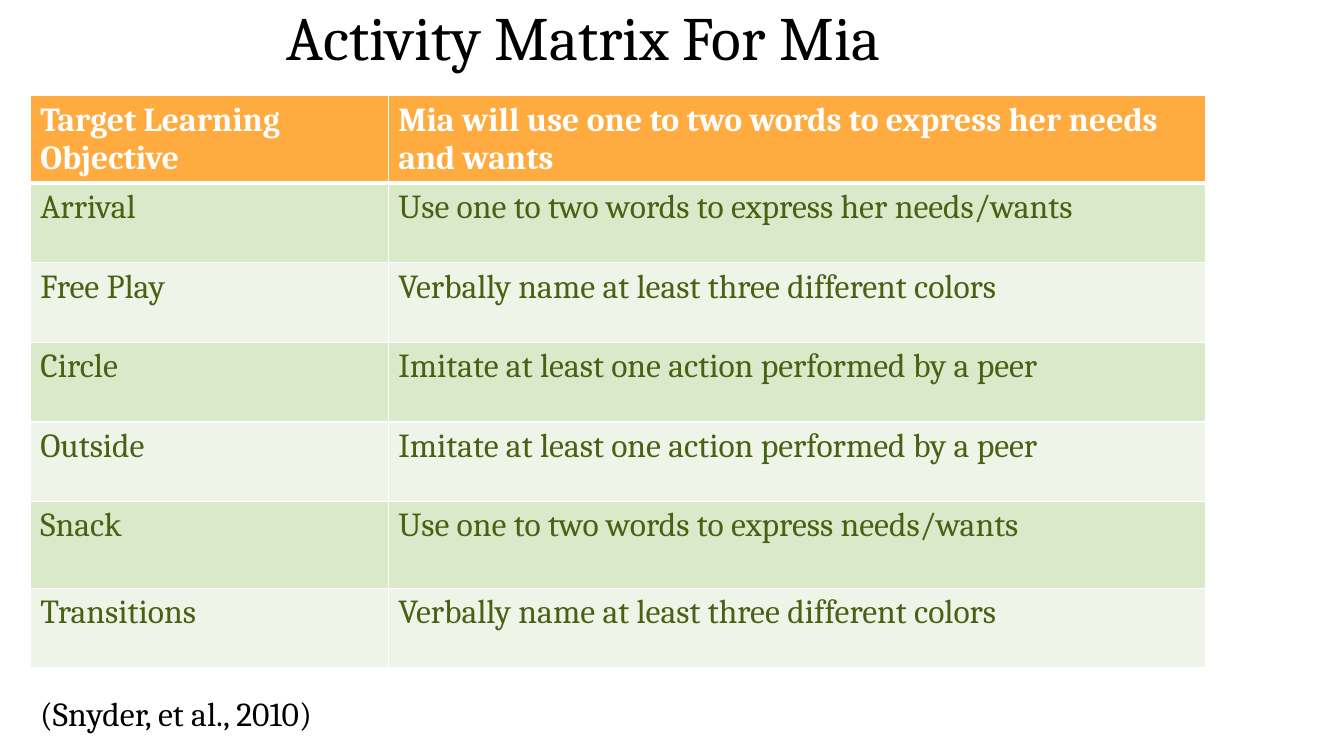
from pptx import Presentation
from pptx.dml.color import RGBColor
from pptx.enum.text import MSO_ANCHOR, PP_ALIGN
from pptx.oxml.ns import qn
from pptx.util import Inches, Pt
from lxml.etree import SubElement

FONT = "Cambria"
BLACK = RGBColor(0x00, 0x00, 0x00)
WHITE = RGBColor(0xFF, 0xFF, 0xFF)
ORANGE = RGBColor(0xFF, 0xAB, 0x40)
GREEN_TEXT = RGBColor(0x48, 0x61, 0x12)
BANDS = [RGBColor(0xEE, 0xF4, 0xE7), RGBColor(0xDB, 0xE9, 0xCB)]

LEFT = 0.3
COL_WIDTHS = [3.55, 8.11]
ROW_HEIGHT, TALL_ROW = 0.79, 0.86
TALL_ROWS = ("Target Learning Objective", "Snack")

ACTIVITIES = [
    ("Target Learning Objective",
     "Mia will use one to two words to express her needs and wants"),
    ("Arrival", "Use one to two words to express her needs/wants"),
    ("Free Play", "Verbally name at least three different colors"),
    ("Circle", "Imitate at least one action performed by a peer"),
    ("Outside", "Imitate at least one action performed by a peer"),
    ("Snack", "Use one to two words to express needs/wants"),
    ("Transitions", "Verbally name at least three different colors"),
]


def write(tf, text, size, color, bold=False):
    tf.word_wrap = True
    p = tf.paragraphs[0]
    p.text = text
    p.font.name, p.font.size, p.font.bold = FONT, Pt(size), bold
    p.font.color.rgb = color
    return p


def set_borders(cell, **widths):
    tc_pr = cell._tc.get_or_add_tcPr()
    for side in ("L", "R", "T", "B"):
        ln = SubElement(tc_pr, qn(f"a:ln{side}"), w=str(Pt(widths.get(side, 1))))
        fill = SubElement(ln, qn("a:solidFill"))
        SubElement(fill, qn("a:srgbClr"), val=str(WHITE))


def add_title(s, text):
    title = s.shapes.title
    title.left, title.top = Inches(0.72), Inches(0.02)
    title.width, title.height = Inches(10.14), Inches(0.93)
    title.text_frame.vertical_anchor = MSO_ANCHOR.TOP
    p = write(title.text_frame, text, 44, BLACK)
    p.alignment = PP_ALIGN.CENTER
    p.line_spacing = 0.9


def add_matrix(s, rows, top):
    heights = [TALL_ROW if name in TALL_ROWS else ROW_HEIGHT for name, _ in rows]
    table = s.shapes.add_table(len(rows), len(COL_WIDTHS), Inches(LEFT), Inches(top),
                               Inches(sum(COL_WIDTHS)), Inches(sum(heights))).table
    for col, width in zip(table.columns, COL_WIDTHS):
        col.width = Inches(width)
    for r, (texts, height) in enumerate(zip(rows, heights)):
        table.rows[r].height = Inches(height)
        header = r == 0
        for c, text in enumerate(texts):
            cell = table.cell(r, c)
            # Thick rule between the header and the first activity
            set_borders(cell, T=3 if r == 1 else 1, B=3 if header else 1)
            cell.fill.solid()
            cell.fill.fore_color.rgb = ORANGE if header else BANDS[r % 2]
            write(cell.text_frame, text, 24, WHITE if header else GREEN_TEXT, header)


def add_citation(s, text):
    box = s.shapes.add_textbox(Inches(LEFT), Inches(6.81), Inches(11.21), Inches(0.52))
    box.text_frame.vertical_anchor = MSO_ANCHOR.MIDDLE
    write(box.text_frame, text, 24, BLACK)


def main():
    prs = Presentation()
    prs.slide_width, prs.slide_height = Inches(13.33), Inches(7.5)
    s = prs.slides.add_slide(prs.slide_layouts[5])  # title only
    add_title(s, "Activity Matrix For Mia")
    add_matrix(s, ACTIVITIES, top=0.95)
    add_citation(s, "(Snyder, et al., 2010)")
    prs.save("out.pptx")


if __name__ == "__main__":
    main()
